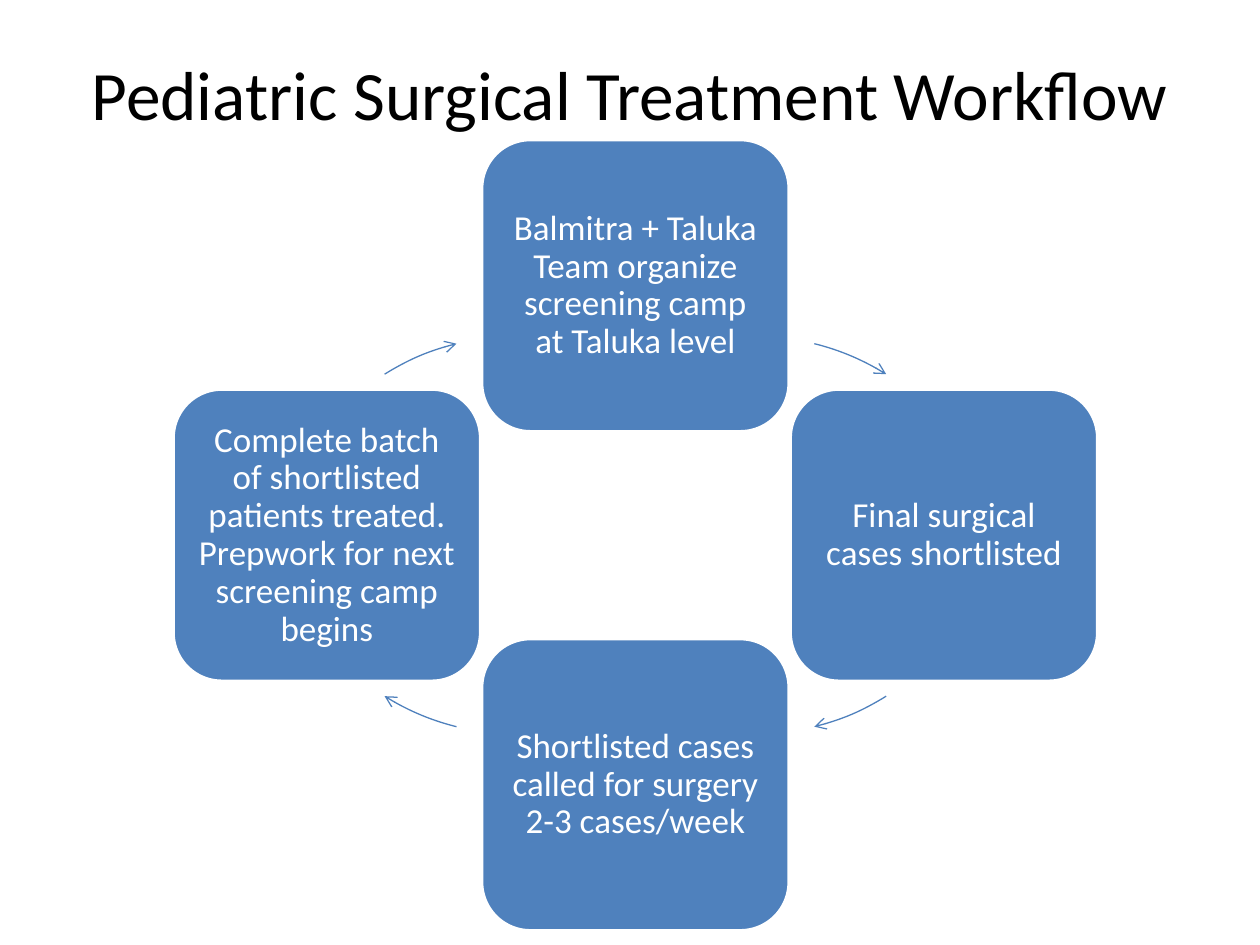
from dataclasses import dataclass
from math import cos, radians, sin

from lxml.etree import SubElement
from pptx import Presentation
from pptx.dml.color import RGBColor
from pptx.enum.shapes import MSO_SHAPE as Preset
from pptx.enum.text import MSO_ANCHOR as Anchor, PP_ALIGN as Align
from pptx.oxml.ns import qn
from pptx.util import Cm, Pt

COLORS = {"step": "4F81BD", "light": "FFFFFF", "title": "000000"}

# Cycle geometry, in cm
CENTER_X, CENTER_Y = 12.81, 10.79
SPREAD_X, SPREAD_Y = 6.22, 5.03
STEP_W, STEP_H = 6.2, 5.89
ARC_RADIUS, ARC_SWEEP = 5.03, 18
ARC_SHIFT_X, ARC_SHIFT_Y = 2.39, 1.02

TEXT_FRAME = {
    "word_wrap": True,
    "vertical_anchor": Anchor.MIDDLE,
    "margin_left": Cm(0.22),
    "margin_right": Cm(0.22),
    "margin_top": Cm(0.22),
    "margin_bottom": Cm(0.22),
}


@dataclass
class Step:
    text: str
    column: int  # -1 left, 0 middle, 1 right
    row: int  # -1 top, 0 middle, 1 bottom


@dataclass
class Arc:
    side_x: int
    side_y: int
    start: float  # degrees, clockwise from the right


STEPS = [
    Step("Balmitra + Taluka Team organize screening camp at Taluka level", 0, -1),
    Step("Final surgical cases shortlisted", 1, 0),
    Step("Shortlisted cases called for surgery 2-3 cases/week", 0, 1),
    Step("Complete batch of shortlisted patients treated. "
         "Prepwork for next screening camp begins", -1, 0),
]
ARCS = [Arc(1, 1, 284), Arc(1, -1, 58), Arc(-1, -1, 104), Arc(-1, 1, 238)]


def color(key: str) -> RGBColor:
    return RGBColor.from_string(COLORS[key])


def write(frame, text: str, size: float, color_key: str) -> None:
    paragraph = frame.paragraphs[0]
    paragraph.text = text
    paragraph.alignment = Align.CENTER
    font = paragraph.runs[0].font
    for attribute, value in {"name": "Calibri", "size": Pt(size)}.items():
        setattr(font, attribute, value)
    font.color.rgb = color(color_key)


def draw_step(slide, step: Step) -> None:
    left = CENTER_X + step.column * SPREAD_X - STEP_W / 2
    top = CENTER_Y + step.row * SPREAD_Y - STEP_H / 2
    box = slide.shapes.add_shape(
        Preset.ROUNDED_RECTANGLE, Cm(left), Cm(top), Cm(STEP_W), Cm(STEP_H))
    box.shadow.inherit = False
    box.fill.solid()
    box.fill.fore_color.rgb = color("step")
    box.line.color.rgb = color("light")
    box.line.width = Pt(2)
    for attribute, value in TEXT_FRAME.items():
        setattr(box.text_frame, attribute, value)
    write(box.text_frame, step.text, 20, "light")
    box.text_frame.paragraphs[0].line_spacing = 0.9


def draw_arc(slide, arc: Arc) -> None:
    left = Cm(CENTER_X + arc.side_x * ARC_SHIFT_X - ARC_RADIUS)
    top = Cm(CENTER_Y + arc.side_y * ARC_SHIFT_Y - ARC_RADIUS)
    radius = Cm(ARC_RADIUS)
    diameter = 2 * radius

    # The frame holds the whole circle, from corner to corner
    builder = slide.shapes.build_freeform(left, top)
    builder.add_line_segments([(left + diameter, top + diameter)], close=False)
    arrow = builder.convert_to_shape()

    # Only the arc is outlined within the frame
    outline = arrow._element.find(f".//{qn('a:path')}")
    start = outline.find(f"{qn('a:moveTo')}/{qn('a:pt')}")
    angle = radians(arc.start)
    start.set("x", str(round(radius * (1 + cos(angle)))))
    start.set("y", str(round(radius * (1 + sin(angle)))))
    outline.remove(outline.find(qn("a:lnTo")))
    SubElement(outline, qn("a:arcTo"), wR=str(radius), hR=str(radius),
               stAng=str(arc.start * 60000), swAng=str(ARC_SWEEP * 60000))

    arrow.shadow.inherit = False
    arrow.fill.background()
    arrow.line.color.rgb = color("step")
    arrow.line.width = Pt(0.75)
    # Open arrowhead at the end of the arc
    SubElement(arrow.line._get_or_add_ln(), qn("a:tailEnd"), type="arrow")


def main() -> None:
    deck = Presentation()
    deck.slide_width, deck.slide_height = Cm(25.4), Cm(19.05)
    slide = deck.slides.add_slide(deck.slide_layouts[5])

    # Title
    title = slide.shapes.title
    title_place = {"left": 1.27, "top": 0.76, "width": 22.86, "height": 2.21}
    for attribute, value in title_place.items():
        setattr(title, attribute, Cm(value))
    title.text_frame.vertical_anchor = Anchor.MIDDLE
    write(title.text_frame, "Pediatric Surgical Treatment Workflow", 39.6, "title")

    # Cycle of steps, each followed by its arrow
    for step, arc in zip(STEPS, ARCS):
        draw_step(slide, step)
        draw_arc(slide, arc)

    deck.save("out.pptx")


if __name__ == "__main__":
    main()
